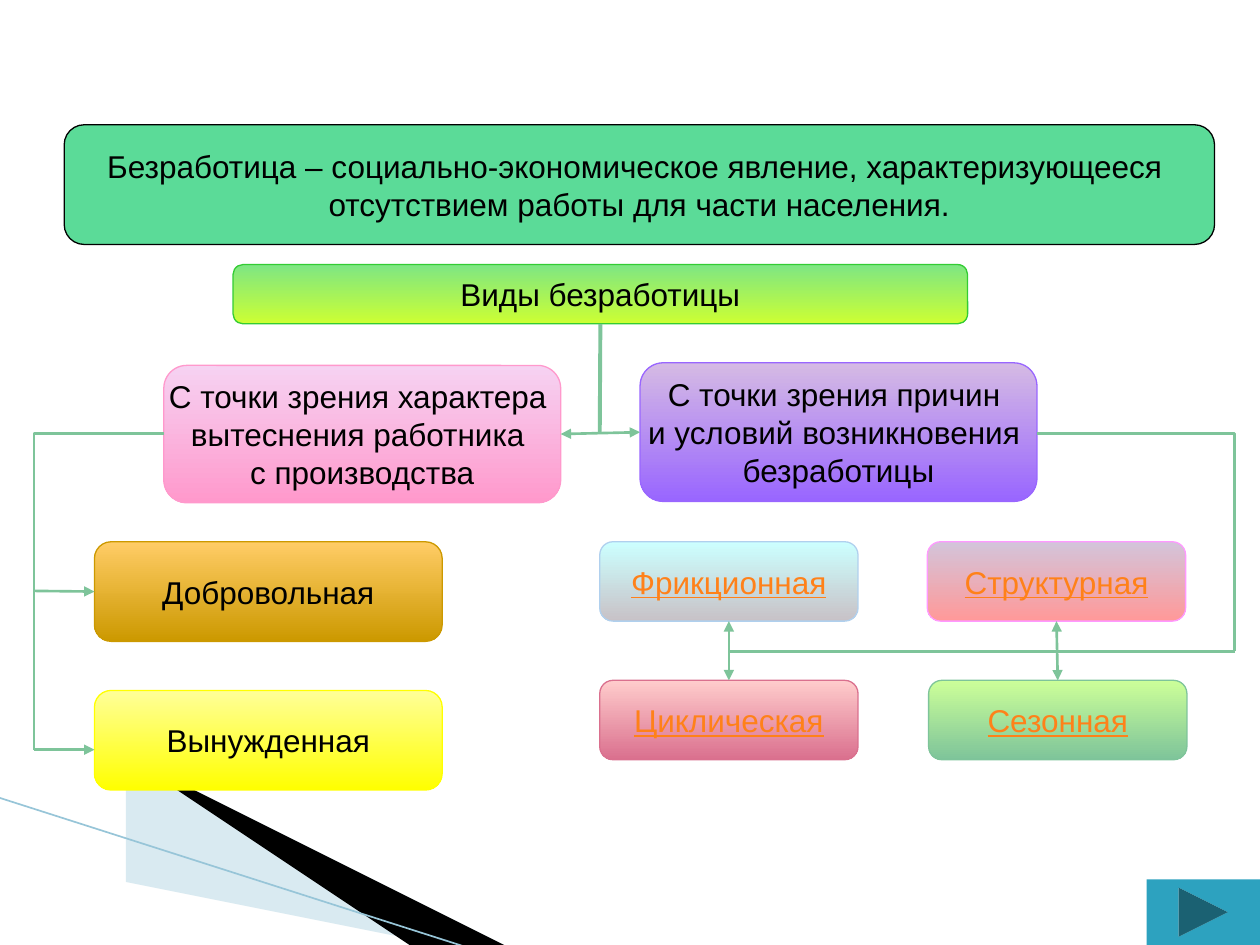
from lxml.etree import SubElement
from pptx import Presentation
from pptx.dml.color import RGBColor
from pptx.enum.shapes import MSO_CONNECTOR, MSO_SHAPE
from pptx.enum.text import MSO_ANCHOR, PP_ALIGN
from pptx.oxml.ns import qn
from pptx.util import Inches, Pt

THEME = {
    "font": "Arial", "size": 18, "text": "000000", "link": "FF8119",
    "connector": "7EC49A", "button": "2DA2BF",
    "wedge_light": "A0CBDC", "wedge_dark": "000000", "edge": "97C5D8",
    "outline": 0.75, "edge_width": 0.95, "stem": 2.25, "branch": 1.5,
}
TOP, LEFT, BOTTOM, RIGHT = range(4)

# name: (lines, (left, top, width, height), fill colours, outline, text colour)
KIND_SIZE = (2.76, 0.79)
CAUSE_SIZE = (2.05, 0.63)
BOXES = {
    "definition": (["Безработица – социально-экономическое явление, характеризующееся ",
                    "отсутствием работы для части населения."],
                   (0.51, 0.99, 9.13, 0.95), ["5BDB98"], "000000", "text"),
    "types": (["Виды безработицы"],
              (1.85, 2.1, 5.83, 0.47), ["7EE683", "CCFF33"], "33CC33", "text"),
    "by_nature": (["С точки зрения характера ", "вытеснения работника ", "с производства"],
                  (1.3, 2.9, 3.15, 1.09), ["F6D2F2", "FF99CC"], "FF99CC", "text"),
    "by_cause": (["С точки зрения причин ", "и условий возникновения ", "безработицы"],
                 (5.08, 2.88, 3.15, 1.1), ["D5BAE4", "9966FF"], "9966FF", "text"),
    "voluntary": (["Добровольная"],
                  (0.75, 4.3, *KIND_SIZE), ["FFCC66", "CC9900"], "CC9900", "text"),
    "forced": (["Вынужденная"],
               (0.75, 5.48, *KIND_SIZE), ["FFFF99", "FFFF00"], "FFFF00", "text"),
    "frictional": (["Фрикционная"],
                   (4.76, 4.3, *CAUSE_SIZE), ["CCFFFF", "C8C2C7"], "B0D0EE", "link"),
    "cyclical": (["Циклическая"],
                 (4.76, 5.4, *CAUSE_SIZE), ["FFCCCC", "DA708E"], "DA708E", "link"),
    "seasonal": (["Сезонная"],
                 (7.37, 5.4, *CAUSE_SIZE), ["CCFF99", "7EC49A"], "7EC49A", "link"),
    "structural": (["Структурная"],
                   (7.36, 4.3, *CAUSE_SIZE), ["D3C4DA", "FF9999"], "FF99FF", "link"),
}

# An end is a point or a (box name, side) pair; arrows lists the ends with heads.
BOTH, END = ("headEnd", "tailEnd"), ("tailEnd",)
STRAIGHT = [
    (("types", BOTTOM), (4.76, 3.44), "stem", ()),
    (("by_nature", RIGHT), ("by_cause", LEFT), "branch", BOTH),
    ((0.27, 5.95), (0.75, 5.95), "branch", END),
    ((0.27, 4.69), ("voluntary", LEFT), "branch", END),
    ((9.8, 5.17), (5.79, 5.17), "branch", ()),
    (("frictional", BOTTOM), ("cyclical", TOP), "branch", BOTH),
    (("structural", BOTTOM), ("seasonal", TOP), "branch", BOTH),
]
BENT = [((8.23, 3.44), (9.8, 5.17)), ((1.3, 3.44), (0.27, 5.95))]

# (points, colour name, opacity in percent)
WEDGES = [
    ([(0.55, 6.51), (5.95, 7.51), (4.56, 7.51), (0.55, 6.5)], "wedge_light", 40),
    ([(0.53, 6.49), (4.57, 7.51), (3.72, 7.52), (0.54, 6.5)], "wedge_dark", 100),
]


def rgb(value):
    return RGBColor.from_string(THEME.get(value, value))


def paint(shape, colours):
    """Fill with one colour, or with a gradient running downwards."""
    shape.shadow.inherit = False
    if len(colours) == 1:
        shape.fill.solid()
        shape.fill.fore_color.rgb = rgb(colours[0])
        return
    shape.fill.gradient()
    shape.fill.gradient_angle = 270
    for stop, colour in zip(shape.fill.gradient_stops, colours):
        stop.color.rgb = rgb(colour)


def add_wedge(slide, points, colour, opacity):
    builder = slide.shapes.build_freeform(*points[0], scale=Inches(1))
    builder.add_line_segments(points[1:], close=True)
    wedge = builder.convert_to_shape()
    paint(wedge, [colour])
    wedge.line.fill.background()
    if opacity < 100:
        tint = wedge.fill._xPr.find(qn("a:solidFill"))[0]
        SubElement(tint, qn("a:alpha"), val=str(opacity * 1000))


def add_box(slide, lines, place, colours, outline, text_colour):
    box = slide.shapes.add_shape(MSO_SHAPE.ROUNDED_RECTANGLE, *map(Inches, place))
    paint(box, colours)
    box.line.color.rgb = rgb(outline)
    box.line.width = Pt(THEME["outline"])
    frame = box.text_frame
    frame.word_wrap = False
    frame.vertical_anchor = MSO_ANCHOR.MIDDLE
    font_format = {"name": THEME["font"], "size": Pt(THEME["size"]),
                   "underline": text_colour == "link"}
    for index, line in enumerate(lines):
        para = frame.add_paragraph() if index else frame.paragraphs[0]
        para.alignment = PP_ALIGN.CENTER
        span = para.add_run()
        span.text = line
        for name, value in font_format.items():
            setattr(span.font, name, value)
        span.font.color.rgb = rgb(text_colour)
    return box


def add_line(slide, start, end, width, colour="connector", arrows=(),
             kind=MSO_CONNECTOR.STRAIGHT):
    line = slide.shapes.add_connector(kind, *map(Inches, (*start, *end)))
    line.line.color.rgb = rgb(colour)
    line.line.width = Pt(THEME[width])
    for arrow in arrows:
        SubElement(line.line._get_or_add_ln(), qn("a:" + arrow), type="triangle")
    SubElement(line._element.spPr, qn("a:effectLst"))
    return line


def link_boxes(slide, boxes, start, end, width, arrows):
    """Draw a straight connector and join the ends that name a box."""
    points = [(0, 0) if isinstance(place[0], str) else place for place in (start, end)]
    line = add_line(slide, *points, width, arrows=arrows)
    for place, join in ((start, line.begin_connect), (end, line.end_connect)):
        if isinstance(place[0], str):
            join(boxes[place[0]], place[1])


def add_corner(slide, start, end):
    """Draw a connector that runs sideways, then turns down once."""
    corner = add_line(slide, start, end, "branch", kind=MSO_CONNECTOR.ELBOW)
    corner._element.spPr.find(qn("a:prstGeom")).set("prst", "bentConnector2")


def main():
    deck = Presentation()
    deck.slide_width, deck.slide_height = Inches(10), Inches(7.5)
    slide = deck.slides.add_slide(deck.slide_layouts[6])
    for wedge in WEDGES:
        add_wedge(slide, *wedge)
    add_line(slide, (-0.01, 6.33), (3.71, 7.52), "edge_width", "edge")
    boxes = {name: add_box(slide, *content) for name, content in BOXES.items()}
    for link in STRAIGHT:
        link_boxes(slide, boxes, *link)
    for corner in BENT:
        add_corner(slide, *corner)
    button = slide.shapes.add_shape(MSO_SHAPE.ACTION_BUTTON_FORWARD_OR_NEXT,
                                    *map(Inches, (9.1, 6.98, 0.9, 0.52)))
    paint(button, ["button"])
    button.line.fill.background()
    deck.save("out.pptx")


if __name__ == "__main__":
    main()
